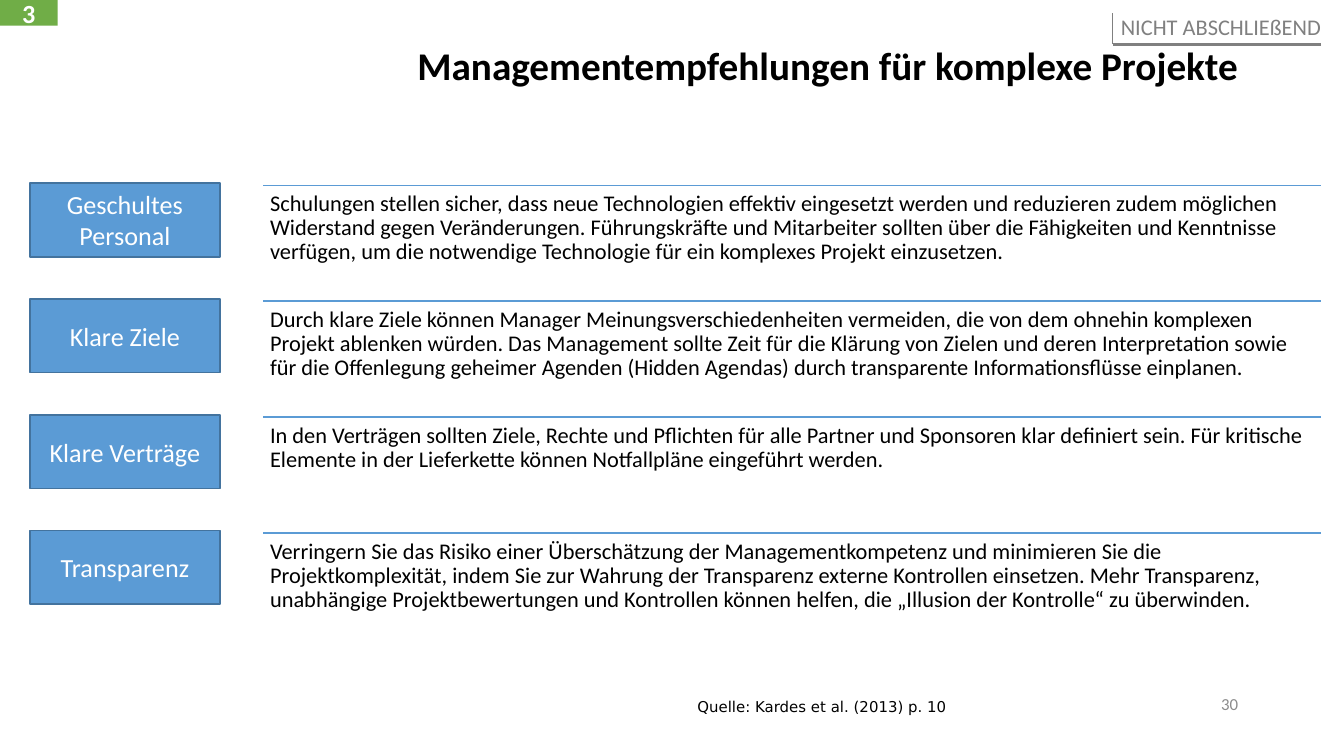
from dataclasses import dataclass

from lxml import etree
from pptx import Presentation
from pptx.dml.color import RGBColor
from pptx.enum.shapes import MSO_CONNECTOR, MSO_SHAPE
from pptx.enum.text import MSO_ANCHOR as Anchor, PP_ALIGN as Align
from pptx.oxml.ns import qn
from pptx.util import Inches, Pt


@dataclass(frozen=True)
class Theme:
    font: str = "Calibri"
    source_font: str = "DejaVu Sans"
    black: str = "000000"
    white: str = "FFFFFF"
    blue: str = "5B9BD5"
    blue_edge: str = "43739E"
    green: str = "70AD47"
    grey: str = "808080"
    number_grey: str = "8C8C8C"
    title_size: float = 21
    label_size: float = 14
    body_size: float = 12
    number_size: float = 9
    source_size: float = 8


THEME = Theme()
INSETS = (0.1, 0.05, 0.1, 0.05)

RECOMMENDATIONS = [
    ("Geschultes Personal",
     "Schulungen stellen sicher, dass neue Technologien effektiv eingesetzt werden und "
     "reduzieren zudem möglichen Widerstand gegen Veränderungen. Führungskräfte und "
     "Mitarbeiter sollten über die Fähigkeiten und Kenntnisse verfügen, um die notwendige "
     "Technologie für ein komplexes Projekt einzusetzen."),
    ("Klare Ziele",
     "Durch klare Ziele können Manager Meinungsverschiedenheiten vermeiden, die von dem "
     "ohnehin komplexen Projekt ablenken würden. Das Management sollte Zeit für die Klärung "
     "von Zielen und deren Interpretation sowie für die Offenlegung geheimer Agenden (Hidden "
     "Agendas) durch transparente Informationsflüsse einplanen."),
    ("Klare Verträge",
     "In den Verträgen sollten Ziele, Rechte und Pflichten für alle Partner und Sponsoren "
     "klar definiert sein. Für kritische Elemente in der Lieferkette können Notfallpläne "
     "eingeführt werden."),
    ("Transparenz",
     "Verringern Sie das Risiko einer Überschätzung der Managementkompetenz und minimieren "
     "Sie die Projektkomplexität, indem Sie zur Wahrung der Transparenz externe Kontrollen "
     "einsetzen. Mehr Transparenz, unabhängige Projektbewertungen und Kontrollen können "
     "helfen, die „Illusion der Kontrolle“ zu überwinden."),
]


def write(shape, text, size, color, font=THEME.font, bold=False, align=Align.LEFT,
          anchor=Anchor.TOP, insets=INSETS, spacing=1.0, wrap=True):
    frame = shape.text_frame
    frame.word_wrap = wrap
    frame.vertical_anchor = anchor
    (frame.margin_left, frame.margin_top,
     frame.margin_right, frame.margin_bottom) = map(Inches, insets)
    para = frame.paragraphs[0]
    para.text = text
    para.alignment = align
    para.line_spacing = spacing
    para.font.name = font
    para.font.size = Pt(size)
    para.font.bold = bold
    para.font.color.rgb = RGBColor.from_string(color)


def add_text(page, box, text, size, color, **style):
    write(page.shapes.add_textbox(*map(Inches, box)), text, size, color, **style)


def add_block(page, box, text, fill, edge=None, bold=False):
    block = page.shapes.add_shape(MSO_SHAPE.RECTANGLE, *map(Inches, box))
    block.shadow.inherit = False
    block.fill.solid()
    block.fill.fore_color.rgb = RGBColor.from_string(fill)
    if edge:
        block.line.color.rgb = RGBColor.from_string(edge)
        block.line.width = Pt(1)
    else:
        block.line.fill.background()
    write(block, text, THEME.label_size, THEME.white, bold=bold,
          align=Align.CENTER, anchor=Anchor.MIDDLE)


def add_line(page, start, end, color, width):
    line = page.shapes.add_connector(MSO_CONNECTOR.STRAIGHT, *map(Inches, start + end))
    line.line.color.rgb = RGBColor.from_string(color)
    line.line.width = Pt(width)
    etree.SubElement(line._element.spPr, qn("a:effectLst"))


def add_header(page, box):
    left, top, width, height = box
    # Chapter marker
    add_block(page, (left, top, 0.43, 0.19), "3", THEME.green, bold=True)
    # Title
    add_text(page, (left + 0.69, top + 0.3, width - 1.38, height - 0.3),
             "Managementempfehlungen für komplexe Projekte", THEME.title_size,
             THEME.black, bold=True, align=Align.RIGHT, spacing=0.9)


def add_sticker(page, box):
    left, top, width, height = box
    right, bottom = left + width, top + height
    add_text(page, box, "NICHT ABSCHLIEßEND", THEME.body_size, THEME.grey,
             align=Align.RIGHT, insets=(0.04, 0, 0, 0.03), wrap=False)
    add_line(page, (right, bottom), (left, bottom), THEME.grey, 1.5)
    add_line(page, (left, top), (left, bottom), THEME.grey, 0.5)


def add_recommendations(page, box):
    left, top, width, height = box
    pitch = height / len(RECOMMENDATIONS)
    text_left = left + 1.74
    for index, (label, advice) in enumerate(RECOMMENDATIONS):
        y = top + index * pitch
        add_block(page, (left, y - 0.02, 1.42, 0.55), label, THEME.blue, THEME.blue_edge)
        add_line(page, (text_left, y), (left + width, y), THEME.blue, 1)
        add_text(page, (text_left, y, left + width - text_left, pitch), advice,
                 THEME.body_size, THEME.black, insets=(0.05,) * 4, spacing=0.9)


def add_footer(page, box):
    left, top, width, height = box
    # Source
    add_text(page, (left, top + 0.05, 3.23, 0.24), "Quelle: Kardes et al. (2013) p. 10",
             THEME.source_size, THEME.black, font=THEME.source_font)
    # Page number
    add_text(page, (left + width - 2.25, top, 2.25, height), "30", THEME.number_size,
             THEME.number_grey, align=Align.RIGHT, anchor=Anchor.MIDDLE)


def main():
    deck = Presentation()
    # Widescreen 16:9
    deck.slide_width = Inches(10)
    deck.slide_height = deck.slide_width * 9 // 16
    page = deck.slides.add_slide(deck.slide_layouts[6])
    add_header(page, (0, 0, 10, 0.73))
    add_sticker(page, (8.28, 0.1, 1.55, 0.23))
    add_recommendations(page, (0.22, 1.38, 9.61, 3.45))
    add_footer(page, (5.09, 5.09, 4.22, 0.3))
    deck.save("out.pptx")


if __name__ == "__main__":
    main()
